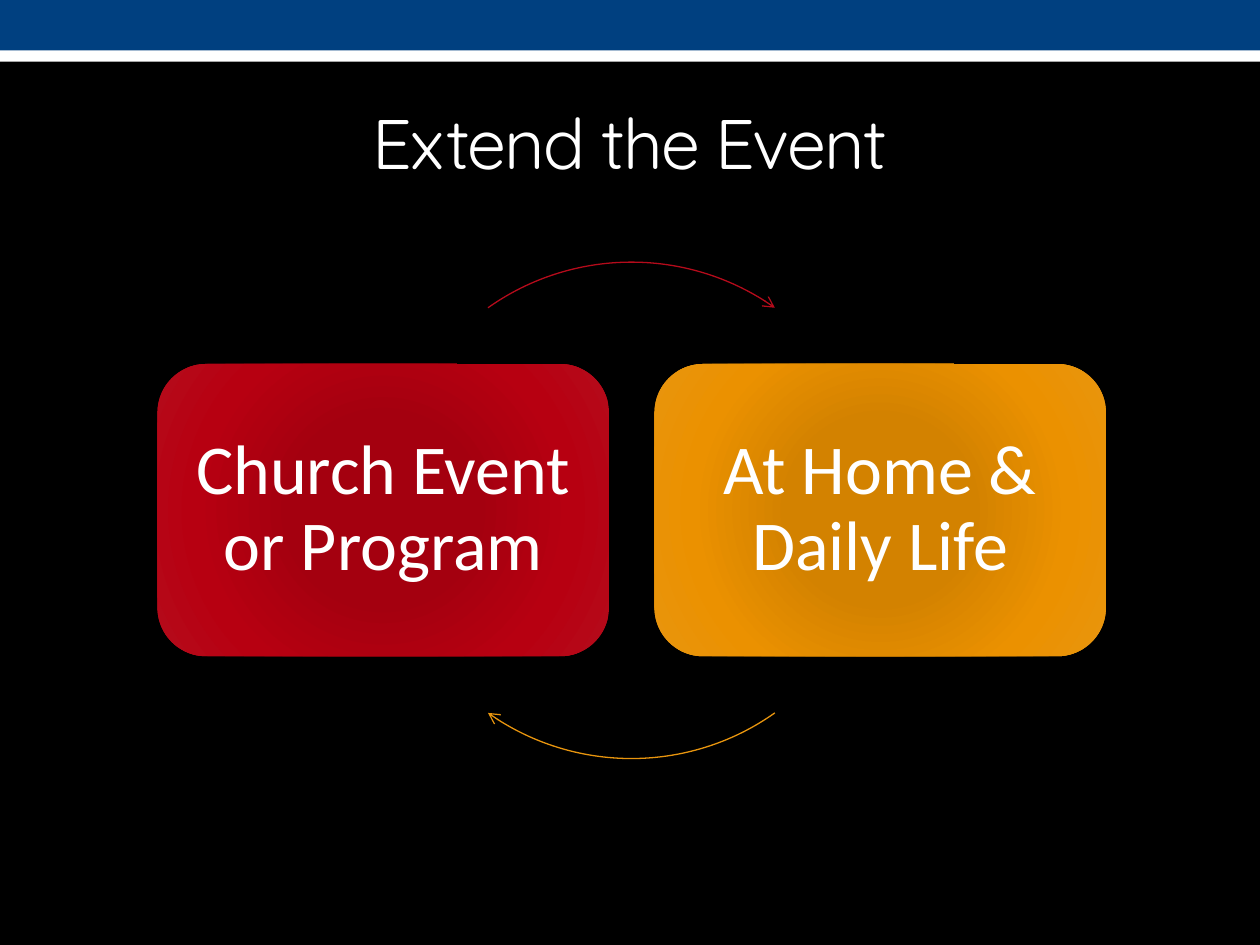
from dataclasses import dataclass

from pptx import Presentation
from pptx import oxml as ox
from pptx.dml import color as col
from pptx.enum import shapes, text
from pptx.oxml import ns
from pptx.util import Pt

KIND = shapes.MSO_SHAPE
WHITE = "FFFFFF"
TOP, WIDE, HIGH = 208, 258, 167
RING = (219, 149.8, 283.7, 283.7)


@dataclass
class Card:
    label: str
    left: float
    stops: dict[int, str]


@dataclass
class Arc:
    start: float
    end: float
    tint: str


CARDS = [
    Card("Church Event or Program", 90,
         {0: "A4000F", 34: "A4000F", 70: "B70011", 100: "B50B1B"}),
    Card("At Home & Daily Life", 374,
         {0: "D38200", 34: "D38200", 70: "EB9100", 100: "E8950E"}),
]
ARCS = [Arc(234.7, 305.3, "B50B1B"), Arc(54.7, 125.3, "E8950E")]


def paint(form, tint: str) -> None:
    form.solid()
    form.fore_color.rgb = col.RGBColor.from_string(tint)


def add_form(slide, kind, left: float, top: float, wide: float, high: float):
    form = slide.shapes.add_shape(kind, Pt(left), Pt(top), Pt(wide), Pt(high))
    form.shadow.inherit = False
    return form


def add_bar(slide, top: float, high: float, tint: str) -> None:
    bar = add_form(slide, KIND.RECTANGLE, 0, top, 720, high)
    paint(bar.fill, tint)
    bar.line.fill.background()


def write(frame, label: str, face: str):
    frame.word_wrap = True
    frame.vertical_anchor = text.MSO_ANCHOR.MIDDLE
    para = frame.paragraphs[0]
    para.alignment = text.PP_ALIGN.CENTER
    para.add_run().text = label
    para.font.name = face
    para.font.size = Pt(40)
    paint(para.font.fill, WHITE)
    return para


def glow(form, stops: dict[int, str]) -> None:
    marks = "".join(
        f'<a:gs pos="{pos * 1000}"><a:srgbClr val="{tint}"/></a:gs>'
        for pos, tint in stops.items())
    grad = ox.parse_xml(
        f'<a:gradFill {ns.nsdecls("a")} rotWithShape="1"><a:gsLst>{marks}</a:gsLst>'
        '<a:path path="circle"><a:fillToRect l="100000" t="100000" '
        'r="100000" b="100000"/></a:path></a:gradFill>')
    form.fill.background()
    props = form.element.spPr
    props.replace(props.find(ns.qn("a:noFill")), grad)


def add_card(slide, card: Card) -> None:
    form = add_form(slide, KIND.ROUNDED_RECTANGLE, card.left, TOP, WIDE, HIGH)
    glow(form, card.stops)
    form.line.fill.background()
    frame = form.text_frame
    frame.margin_left = frame.margin_right = Pt(12)
    frame.margin_top = frame.margin_bottom = Pt(12)
    write(frame, card.label, "Calibri").line_spacing = 0.9


def add_arc(slide, arc: Arc) -> None:
    form = add_form(slide, KIND.ARC, *RING)
    form.adjustments[0] = arc.start * 0.6
    form.adjustments[1] = arc.end * 0.6
    form.fill.background()
    form.line.width = Pt(0.75)
    paint(form.line.fill, arc.tint)
    line = form.element.spPr.find(ns.qn("a:ln"))
    line.append(ox.parse_xml(f'<a:tailEnd {ns.nsdecls("a")} type="arrow"/>'))


def add_title(slide, label: str) -> None:
    box = slide.shapes.add_textbox(Pt(36), Pt(41.8), Pt(648), Pt(77.8))
    para = write(box.text_frame, label, "Quicksand")
    para.runs[0].font.bold = False
    para.runs[0].font._element.set("spc", "-100")


def main() -> None:
    deck = Presentation()
    deck.slide_width, deck.slide_height = Pt(720), Pt(540)
    slide = deck.slides.add_slide(deck.slide_layouts[6])
    paint(slide.background.fill, "000000")
    add_bar(slide, 17.3, 18, WHITE)
    add_bar(slide, 0, 28.8, "004080")
    for card, arc in zip(CARDS, ARCS):
        add_card(slide, card)
        add_arc(slide, arc)
    add_title(slide, "Extend the Event")
    deck.save("out.pptx")


if __name__ == "__main__":
    main()
